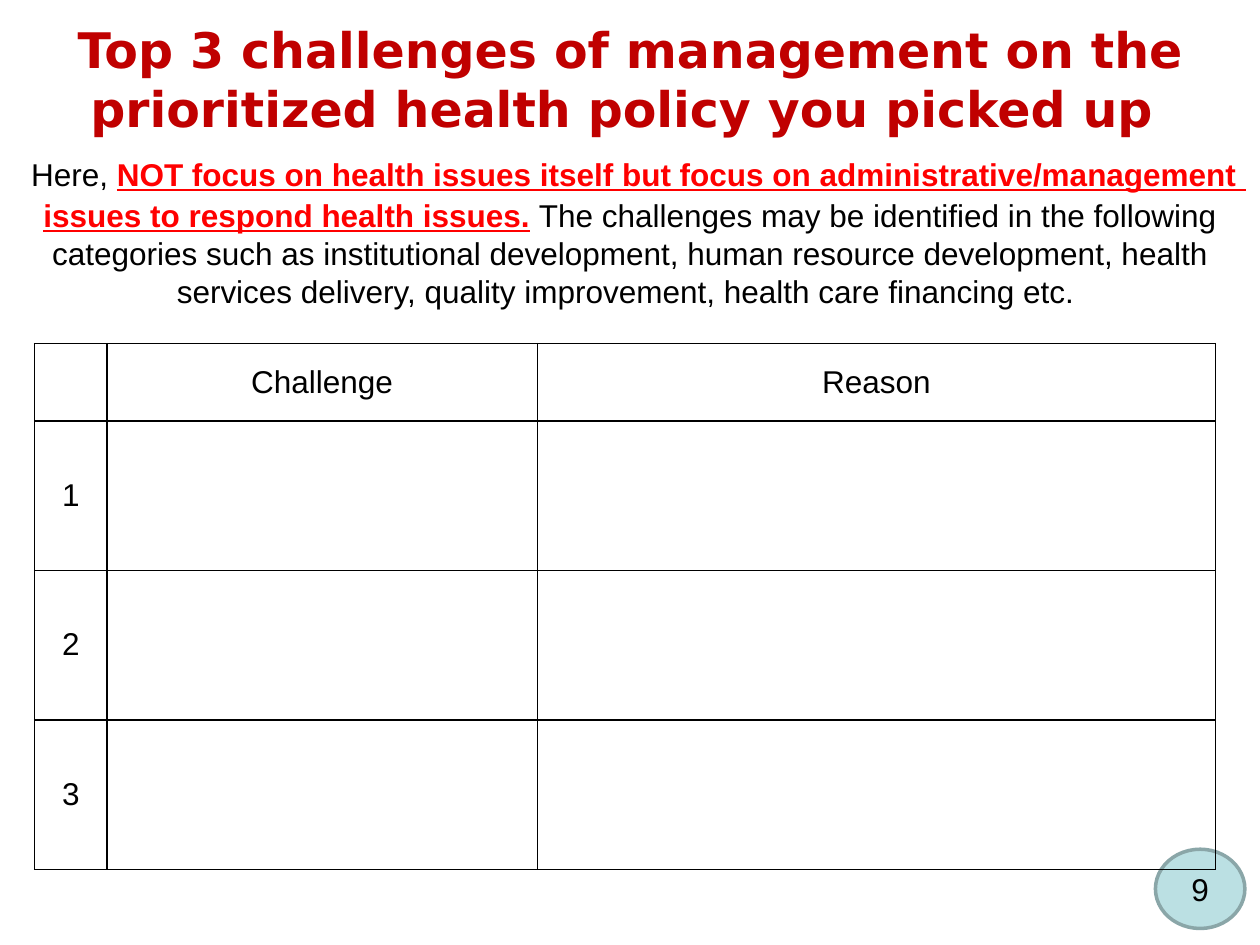
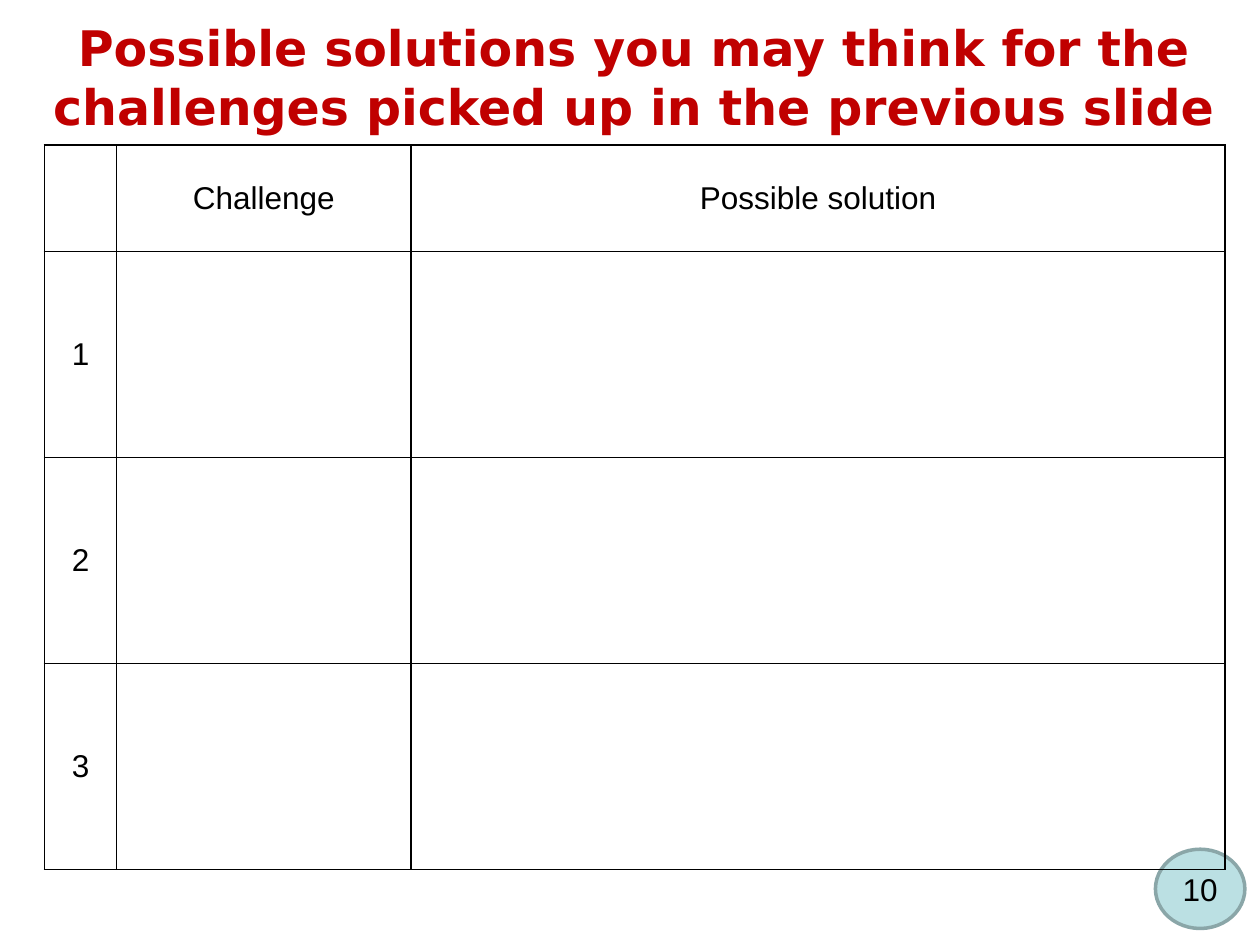
from lxml import etree
from pptx import Presentation
from pptx.dml.color import RGBColor
from pptx.enum import shapes, text
from pptx.oxml import ns
from pptx.util import Pt

TITLE_RED = RGBColor(0xC0, 0x00, 0x00)
WARNING_RED = RGBColor(0xFF, 0x00, 0x00)
BLACK = RGBColor(0x00, 0x00, 0x00)
BADGE_FILL = RGBColor(0xBB, 0xE0, 0xE3)
BADGE_LINE = RGBColor(0x8A, 0xA6, 0xA8)
TITLE_FONT = "DejaVu Sans"
BODY_FONT = "Arial"
BADGE_BOX = (660.25, 485.3, 51.1, 45.3)
NUMBER_WIDTH = 41.25


def add_run(paragraph, words, color=BLACK, bold=False, underline=False, font=BODY_FONT, size=18):
    run = paragraph.add_run()
    run.text = words
    run.font.name = font
    run.font.size = Pt(size)
    run.font.bold = bold
    run.font.underline = underline
    run.font.color.rgb = color


def add_title_run(paragraph, words):
    add_run(paragraph, words, TITLE_RED, True, font=TITLE_FONT, size=28)


def center_text(frame):
    frame.word_wrap = True
    frame.vertical_anchor = text.MSO_ANCHOR.MIDDLE
    paragraph = frame.paragraphs[0]
    paragraph.alignment = text.PP_ALIGN.CENTER
    return paragraph


def add_title(slide, box, words):
    shape = slide.shapes.add_textbox(*map(Pt, box))
    paragraph = center_text(shape.text_frame)
    add_title_run(paragraph, words)
    return paragraph


def add_instructions(paragraph):
    paragraph.add_line_break()
    add_title_run(paragraph, " ")
    add_run(paragraph, "Here, ")
    add_run(paragraph, "NOT focus on health issues itself but focus on administrative/management  "
            "issues to respond health issues.", WARNING_RED, True, True)
    add_run(paragraph, " ", bold=True)
    add_run(paragraph, "The challenges may be identified in the following categories such as "
            "institutional development, human resource development, health services delivery, "
            "quality improvement, health care financing etc. ")


def add_page_badge(slide, box, number):
    badge = slide.shapes.add_shape(shapes.MSO_SHAPE.OVAL, *map(Pt, box))
    badge.shadow.inherit = False
    badge.fill.solid()
    badge.fill.fore_color.rgb = BADGE_FILL
    badge.line.color.rgb = BADGE_LINE
    badge.line.width = Pt(2)
    add_run(center_text(badge.text_frame), str(number))


def add_borders(cell):
    properties = cell._tc.get_or_add_tcPr()
    for position, side in enumerate(("lnL", "lnR", "lnT", "lnB")):
        line = etree.Element(ns.qn(f"a:{side}"), w=str(Pt(1)))
        fill = etree.SubElement(line, ns.qn("a:solidFill"))
        etree.SubElement(fill, ns.qn("a:srgbClr"), val=str(BLACK))
        properties.insert(position, line)


def add_worksheet(slide, box, challenge_width, header_height, answer_heading):
    left, top, width, height = box
    rows = [("", "Challenge", answer_heading)] + [(str(rank), "", "") for rank in (1, 2, 3)]
    frame = slide.shapes.add_table(len(rows), len(rows[0]), *map(Pt, box))
    table = frame.table
    table.first_row = False
    table.horz_banding = False
    widths = (NUMBER_WIDTH, challenge_width, width - NUMBER_WIDTH - challenge_width)
    for column, column_width in zip(table.columns, widths):
        column.width = Pt(column_width)
    answer_height = (height - header_height) / (len(rows) - 1)
    for index, labels in enumerate(rows):
        table.rows[index].height = Pt(answer_height if index else header_height)
        for cell, label in zip(table.rows[index].cells, labels):
            cell.fill.background()
            add_borders(cell)
            if label:
                cell.vertical_anchor = text.MSO_ANCHOR.MIDDLE
                paragraph = cell.text_frame.paragraphs[0]
                paragraph.alignment = text.PP_ALIGN.CENTER
                add_run(paragraph, label)


def add_challenges_slide(presentation):
    slide = presentation.slides.add_slide(presentation.slide_layouts[6])
    title = add_title(slide, (0, 49, 720, 90),
                      "Top 3 challenges of management on the prioritized health policy you picked up ")
    add_instructions(title)
    add_page_badge(slide, BADGE_BOX, 9)
    add_worksheet(slide, (19.8, 196.4, 674.75, 300.4), 246, 44.1, "Reason")


def add_solutions_slide(presentation):
    slide = presentation.slides.add_slide(presentation.slide_layouts[6])
    add_title(slide, (20, 15.2, 684, 57),
              "Possible solutions you may think for the challenges picked up in the previous slide")
    add_page_badge(slide, BADGE_BOX, 10)
    add_worksheet(slide, (25.4, 82.9, 674.75, 413.9), 168.25, 60.9, "Possible solution")


def main():
    presentation = Presentation()
    presentation.slide_width = Pt(720)
    presentation.slide_height = Pt(540)
    add_challenges_slide(presentation)
    add_solutions_slide(presentation)
    presentation.save("out.pptx")


if __name__ == "__main__":
    main()
